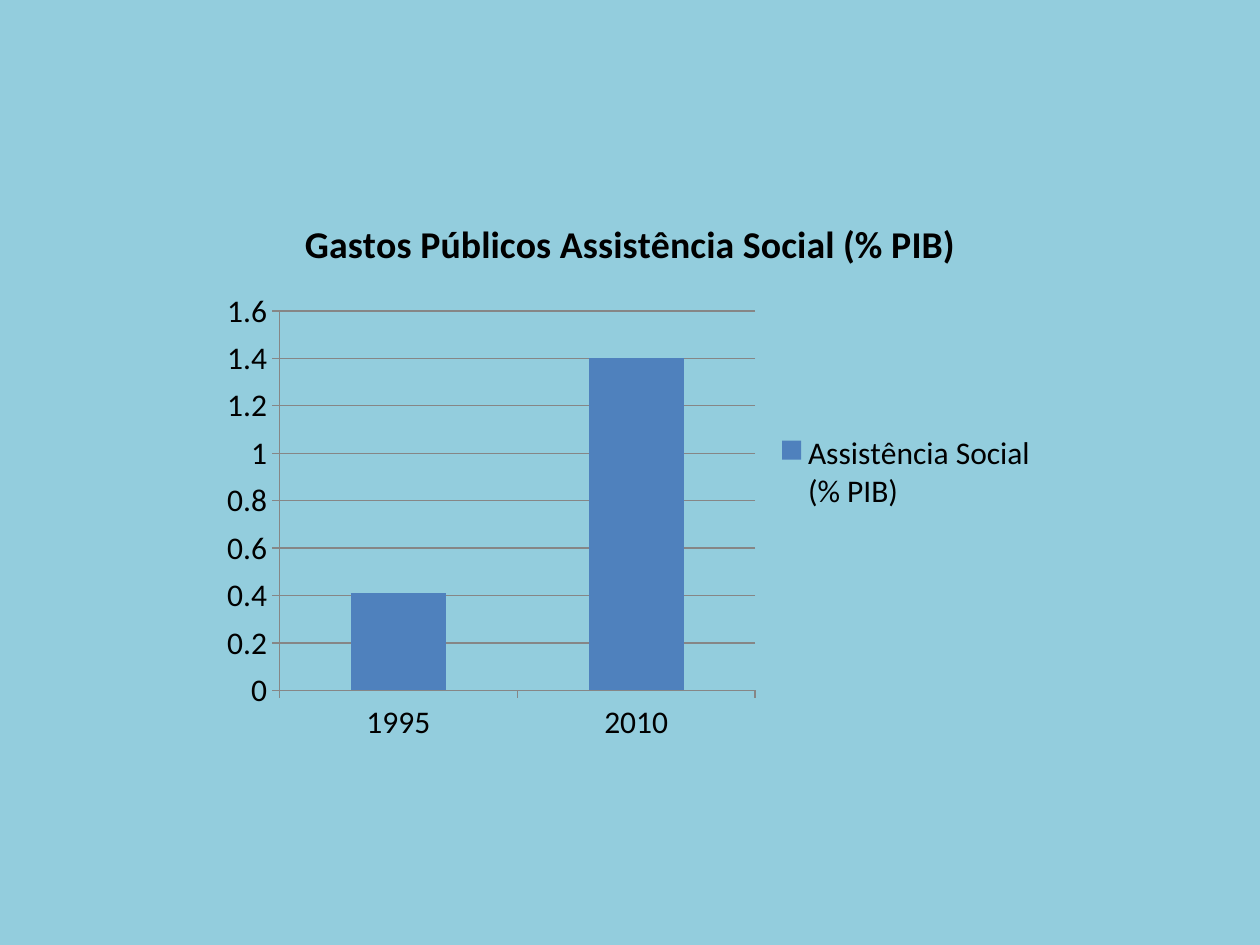
from pptx import Presentation
from pptx.chart.data import CategoryChartData
from pptx.dml.color import RGBColor
from pptx.enum.chart import XL_CHART_TYPE, XL_LEGEND_POSITION, XL_TICK_MARK
from pptx.util import Inches, Pt

COLUMNS = XL_CHART_TYPE.COLUMN_CLUSTERED
RIGHT = XL_LEGEND_POSITION.RIGHT
OUTSIDE = XL_TICK_MARK.OUTSIDE
NO_TICK = XL_TICK_MARK.NONE
BLANK_LAYOUT = 6
FONT = "Calibri"
COLORS = {"background": "93CDDD", "text": "000000", "bar": "4F81BD", "line": "868686"}


def color(name):
    """Return the named palette colour."""
    return RGBColor.from_string(COLORS[name])


def style_font(font, size, bold=False):
    """Apply the slide's typeface and text colour."""
    font.name = FONT
    font.size = Pt(size)
    font.bold = bold
    font.color.rgb = color("text")


def style_line(line):
    """Draw an axis or gridline in thin grey."""
    line.color.rgb = color("line")
    line.width = Pt(0.75)


def style_axis(axis):
    """Give an axis outside ticks and a grey line."""
    axis.major_tick_mark = OUTSIDE
    axis.minor_tick_mark = NO_TICK
    style_line(axis.format.line)


def add_spending_chart(slide):
    """Add the column chart of social assistance spending."""
    spending = CategoryChartData(number_format="General")
    spending.categories = ["1995", "2010"]
    spending.add_series("Assistência Social (% PIB)", [0.41, 1.4])
    chart = slide.shapes.add_chart(
        COLUMNS, Inches(1.67), Inches(1.53), Inches(6.67), Inches(4.44), spending
    ).chart
    style_font(chart.font, 18)

    heading = chart.chart_title.text_frame
    heading.text = "Gastos Públicos Assistência Social (% PIB)"
    style_font(heading.paragraphs[0].runs[0].font, 21.6, bold=True)
    chart.chart_title.include_in_layout = False

    chart.has_legend = True
    chart.legend.position = RIGHT
    chart.legend.include_in_layout = False

    for axis in (chart.category_axis, chart.value_axis):
        style_axis(axis)
    chart.value_axis.has_major_gridlines = True
    style_line(chart.value_axis.major_gridlines.format.line)

    plot = chart.plots[0]
    plot.gap_width = 150
    plot.vary_by_categories = False
    bars = plot.series[0].format.fill
    bars.solid()
    bars.fore_color.rgb = color("bar")


def main():
    """Build and save the slide."""
    deck = Presentation()
    deck.slide_width, deck.slide_height = Inches(10), Inches(7.5)
    slide = deck.slides.add_slide(deck.slide_layouts[BLANK_LAYOUT])
    backdrop = slide.background.fill
    backdrop.solid()
    backdrop.fore_color.rgb = color("background")
    add_spending_chart(slide)
    deck.save("out.pptx")


if __name__ == "__main__":
    main()
